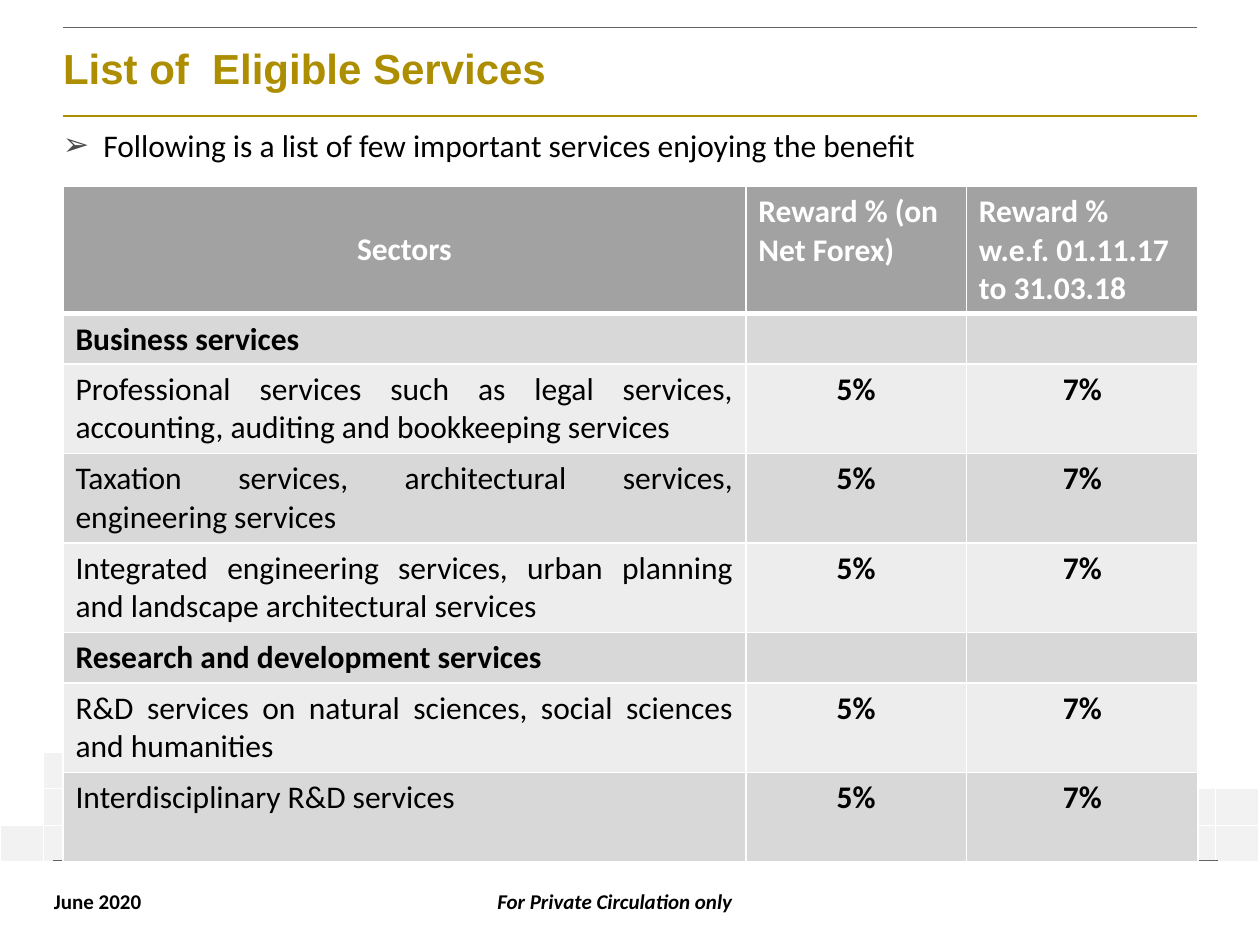
"""Build the slide listing eligible services and their reward rates."""
from dataclasses import dataclass

from pptx import Presentation
from pptx.dml.color import RGBColor
from pptx.enum.shapes import MSO_CONNECTOR
from pptx.enum.text import MSO_ANCHOR as Anchor, MSO_AUTO_SIZE as AutoSize, PP_ALIGN as Align
from pptx.oxml.ns import qn
from pptx.oxml.xmlchemy import OxmlElement
from pptx.util import Inches, Pt


@dataclass(frozen=True)
class Theme:
    gold: str = "AD8E00"
    rule: str = "646464"
    bullet: str = "4B4B4B"
    ink: str = "000000"
    white: str = "FFFFFF"
    header: str = "A2A2A2"
    bands: tuple = ("D8D8D8", "EDEDED")
    mosaic: str = "F2F2F2"
    heading_font: str = "Arial"
    body_font: str = "Calibri"
    title_size: int = 24
    body_size: int = 18
    footer_size: int = 12
    mosaic_size: int = 6


def add_child(parent, tag, **attributes):
    child = OxmlElement(tag)
    for key, value in attributes.items():
        child.set(key, str(value))
    parent.append(child)
    return child


class SlideBuilder:
    def __init__(self, slide, theme):
        self.slide = slide
        self.theme = theme

    def put_text(self, frame, text, size=None, color=None, font=None, bold=False,
                 italic=False, align=Align.LEFT):
        paragraph = frame.paragraphs[0]
        paragraph.text = text
        paragraph.alignment = align
        for run in paragraph.runs:
            run.font.name = font or self.theme.body_font
            run.font.size = Pt(size or self.theme.body_size)
            run.font.bold = bold
            run.font.italic = italic
            run.font.color.rgb = RGBColor.from_string(color or self.theme.ink)
        return paragraph

    def title(self, text, left, top, width, height):
        heading = self.slide.shapes.title
        heading.left, heading.top = Inches(left), Inches(top)
        heading.width, heading.height = Inches(width), Inches(height)
        frame = heading.text_frame
        frame.margin_left = frame.margin_right = frame.margin_bottom = 0
        frame.margin_top = Inches(0.04)
        frame.vertical_anchor = Anchor.MIDDLE
        frame.auto_size = AutoSize.NONE
        frame.word_wrap = True
        paragraph = self.put_text(frame, text, self.theme.title_size, self.theme.gold,
                                  self.theme.heading_font, bold=True)
        paragraph.line_spacing = 0.85

    def rule(self, left, right, y, color, weight):
        line = self.slide.shapes.add_connector(
            MSO_CONNECTOR.STRAIGHT, Inches(left), Inches(y), Inches(right), Inches(y))
        line.line.color.rgb = RGBColor.from_string(color)
        line.line.width = Pt(weight)
        add_child(line.element.spPr, "a:effectLst")

    def text_box(self, left, top, width, height, wrap=True):
        box = self.slide.shapes.add_textbox(
            Inches(left), Inches(top), Inches(width), Inches(height))
        box.text_frame.word_wrap = wrap
        return box.text_frame

    def footer(self, text, left, width, wrap=True, **style):
        frame = self.text_box(left, 7, width, 0.3, wrap)
        self.put_text(frame, text, self.theme.footer_size, bold=True, **style)

    def bullet(self, text, left, top, width, height):
        frame = self.text_box(left, top, width, height)
        frame.margin_left = frame.margin_right = frame.margin_top = frame.margin_bottom = 0
        paragraph = self.put_text(frame, text, align=Align.JUSTIFY)
        paragraph.space_after = Pt(6)
        properties = paragraph._p.get_or_add_pPr()
        properties.set("marL", str(Inches(0.32)))
        properties.set("indent", str(Inches(-0.32)))
        add_child(add_child(properties, "a:buClr"), "a:srgbClr", val=self.theme.bullet)
        add_child(properties, "a:buFont", typeface=self.theme.heading_font)
        add_child(properties, "a:buChar", char="➢")

    def grid(self, left, top, widths, heights):
        grid = self.slide.shapes.add_table(
            len(heights), len(widths), Inches(left), Inches(top),
            Inches(sum(widths)), Inches(sum(heights))).table
        grid.horz_banding = False
        for column, width in zip(grid.columns, widths):
            column.width = Inches(width)
        for row, height in zip(grid.rows, heights):
            row.height = Inches(height)
        return grid

    def style_cell(self, cell, fill, bottom=1):
        properties = cell._tc.get_or_add_tcPr()
        for side, weight in (("L", 1), ("R", 1), ("T", 1), ("B", bottom)):
            edge = add_child(properties, f"a:ln{side}", w=Pt(weight))
            add_child(add_child(edge, "a:solidFill"), "a:srgbClr", val=self.theme.white)
        if fill:
            cell.fill.solid()
            cell.fill.fore_color.rgb = RGBColor.from_string(fill)
        else:
            cell.fill.background()

    def mosaic(self, pattern, top, row_height):
        columns = len(pattern[0])
        grid = self.grid(0, top, [10 / columns] * columns, [row_height] * len(pattern))
        grid.first_row = False
        for row, marks in zip(grid.rows, pattern):
            for cell, mark in zip(row.cells, marks):
                self.style_cell(cell, self.theme.mosaic if mark == "#" else None)
                cell.margin_left = cell.margin_right = 0
                cell.margin_top = cell.margin_bottom = 0
                add_child(cell._tc.find(qn("a:txBody")).find(qn("a:p")), "a:endParaRPr",
                          sz=self.theme.mosaic_size * 100)

    def services_table(self, header, services, left, top, widths, heights):
        grid = self.grid(left, top, widths, heights)
        for column, label in enumerate(header):
            cell = grid.cell(0, column)
            self.style_cell(cell, self.theme.header, bottom=3)
            self.put_text(cell.text_frame, label, color=self.theme.white, bold=True,
                          align=Align.LEFT if column else Align.CENTER)
        grid.cell(0, 0).vertical_anchor = Anchor.MIDDLE
        for index, (service, *rates) in enumerate(services):
            cells = list(grid.rows[index + 1].cells)
            for cell in cells:
                self.style_cell(cell, self.theme.bands[index % 2])
            self.put_text(cells[0].text_frame, service, bold=not rates,
                          align=Align.JUSTIFY if rates else Align.LEFT)
            for cell, rate in zip(cells[1:], rates):
                self.put_text(cell.text_frame, rate, bold=True, align=Align.CENTER)


MOSAIC = (
    ".#.#....#.#.#.#....#.#.#.#...",
    ".###.##.###.###.##.###.###.##",
    "#" * 29,
)
HEADER = ("Sectors", "Reward % (on Net Forex)", "Reward % w.e.f. 01.11.17 to 31.03.18")
RATES = ("5%", "7%")
SERVICES = (
    ("Business services",),
    ("Professional services such as legal services, accounting, auditing and "
     "bookkeeping services", *RATES),
    ("Taxation services, architectural services, engineering services", *RATES),
    ("Integrated engineering services, urban planning and landscape architectural "
     "services", *RATES),
    ("Research and development services",),
    ("R&D services on natural sciences, social sciences and humanities", *RATES),
    ("Interdisciplinary R&D services", *RATES),
)


def main():
    deck = Presentation()
    deck.slide_width, deck.slide_height = Inches(10), Inches(7.5)
    theme = Theme()
    builder = SlideBuilder(deck.slides.add_slide(deck.slide_layouts[5]), theme)

    builder.mosaic(MOSAIC, 5.97, 0.29)
    builder.rule(0.5, 9.5, 0.92, theme.gold, 1.5)
    builder.rule(0.5, 9.5, 0.22, theme.rule, 0.5)
    builder.rule(0.42, 9.67, 6.83, theme.rule, 0.25)
    builder.footer("June 2020", 0.33, 0.91, wrap=False)
    builder.footer("For Private Circulation only", 2.42, 4.92, italic=True, align=Align.CENTER)
    builder.title("List of  Eligible Services", 0.5, 0.22, 9, 0.66)
    heights = [1.01] + [0.71 if rates else 0.4 for _, *rates in SERVICES]
    builder.services_table(HEADER, SERVICES, 0.5, 1.48, (5.42, 1.75, 1.84), heights)
    builder.bullet("Following is a list of few important services enjoying the benefit",
                   0.5, 1, 9, 0.5)
    deck.save("out.pptx")


if __name__ == "__main__":
    main()
